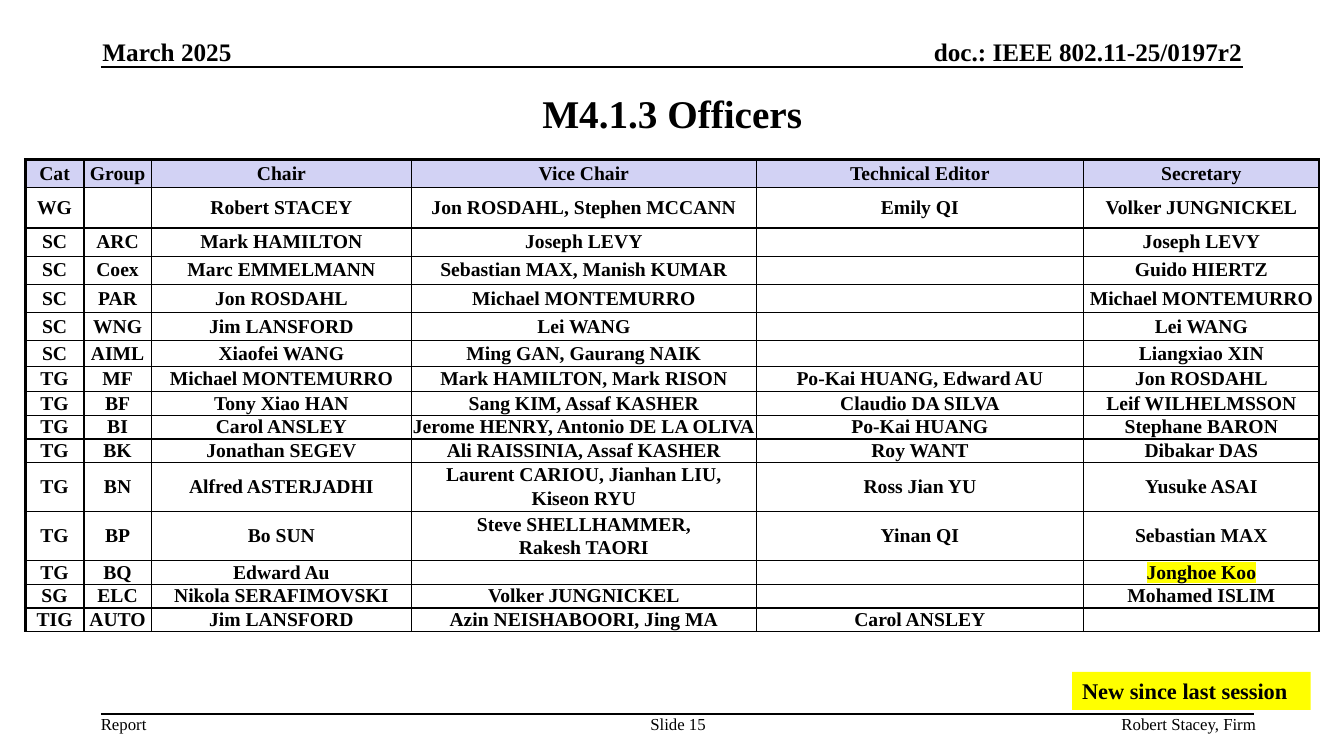
import pptx
import pptx.dml.color
import pptx.enum.shapes
import pptx.enum.text
import pptx.oxml
import pptx.oxml.ns
import pptx.util
from dataclasses import dataclass
from lxml import etree


@dataclass(frozen=True)
class Theme:
    font: str = "Times New Roman"
    ink: str = "000000"
    header_fill: str = "D2D2F4"
    highlight: str = "FFFF00"
    title_size: int = 28
    header_size: int = 18
    legend_size: int = 16
    table_size: int = 14
    footer_size: int = 12
    thin: float = 1
    thick: float = 2.25


theme = Theme()
ALIGN = pptx.enum.text.PP_ALIGN
ANCHOR = pptx.enum.text.MSO_ANCHOR
qn = pptx.oxml.ns.qn
color = pptx.dml.color.RGBColor.from_string

# The slide is a grid of 160 columns by 90 rows
presentation = pptx.Presentation()
presentation.slide_width = pptx.util.Inches(13.33)
presentation.slide_height = pptx.util.Inches(7.5)
slide = presentation.slides.add_slide(presentation.slide_layouts[6])


def grid(*units):
    return [round(unit * presentation.slide_height / 90) for unit in units]


def write(paragraph, text, size, bold, align):
    paragraph.alignment = align
    run = paragraph.add_run()
    run.text = text
    run.font.name = theme.font
    run.font.size = pptx.util.Pt(size)
    run.font.bold = bold
    run.font.color.rgb = color(theme.ink)
    return run


# Header and footer rules
for left, right, row in [(12, 148, 8), (12, 149.3, 85)]:
    rule = slide.shapes.add_connector(
        pptx.enum.shapes.MSO_CONNECTOR.STRAIGHT, *grid(left, row, right, row))
    rule.line.color.rgb = color(theme.ink)
    rule.line.width = pptx.util.Pt(theme.thin)
    etree.SubElement(rule._element.spPr, qn("a:effectLst"))

# Title, header and footer texts
texts = [
    ("M4.1.3 Officers", (12, 9, 136, 8.9), theme.title_size, True, ALIGN.CENTER, ANCHOR.MIDDLE),
    ("March 2025", (12.2, 4.3, 17, 3.6), theme.header_size, True, ALIGN.LEFT, ANCHOR.BOTTOM),
    ("doc.: IEEE 802.11-25/0197r2", (101.8, 4.3, 46, 3.6), theme.header_size, True,
     ALIGN.RIGHT, ANCHOR.BOTTOM),
    ("Report", (12, 85, 7, 2.4), theme.footer_size, False, ALIGN.LEFT, ANCHOR.TOP),
    ("Slide 15", (76.7, 85, 8, 2.4), theme.footer_size, False, ALIGN.CENTER, ANCHOR.TOP),
    ("Robert Stacey, Firm", (121.1, 85, 28.4, 2.4), theme.footer_size, False,
     ALIGN.RIGHT, ANCHOR.TOP),
]
for text, place, size, bold, align, anchor in texts:
    frame = slide.shapes.add_textbox(*grid(*place)).text_frame
    frame.word_wrap = True
    frame.vertical_anchor = anchor
    frame.margin_left = frame.margin_right = frame.margin_top = frame.margin_bottom = 0
    write(frame.paragraphs[0], text, size, bold, align)

# Legend for the highlight
legend = slide.shapes.add_shape(
    pptx.enum.shapes.MSO_SHAPE.RECTANGLE, *grid(127.6, 80, 28.4, 4.5))
legend.shadow.inherit = False
legend.fill.solid()
legend.fill.fore_color.rgb = color(theme.highlight)
legend.line.fill.background()
legend.text_frame.word_wrap = True
legend.text_frame.vertical_anchor = ANCHOR.MIDDLE
write(legend.text_frame.paragraphs[0], "New since last session", theme.legend_size, True, ALIGN.LEFT)

# Officers: a line feed starts a second paragraph in a cell
officers = [
    ("Cat", "Group", "Chair", "Vice Chair", "Technical Editor", "Secretary"),
    ("WG", "", "Robert STACEY", "Jon ROSDAHL, Stephen MCCANN", "Emily QI", "Volker JUNGNICKEL"),
    ("SC", "ARC", "Mark HAMILTON", "Joseph LEVY", "", "Joseph LEVY"),
    ("SC", "Coex", "Marc EMMELMANN", "Sebastian MAX, Manish KUMAR", "", "Guido HIERTZ"),
    ("SC", "PAR", "Jon ROSDAHL", "Michael MONTEMURRO", "", "Michael MONTEMURRO"),
    ("SC", "WNG", "Jim LANSFORD", "Lei WANG", "", "Lei WANG"),
    ("SC", "AIML", "Xiaofei WANG", "Ming GAN, Gaurang NAIK", "", "Liangxiao XIN"),
    ("TG", "MF", "Michael MONTEMURRO", "Mark HAMILTON, Mark RISON", "Po-Kai HUANG, Edward AU",
     "Jon ROSDAHL"),
    ("TG", "BF", "Tony Xiao HAN", "Sang KIM, Assaf KASHER", "Claudio DA SILVA", "Leif WILHELMSSON"),
    ("TG", "BI", "Carol ANSLEY", "Jerome HENRY, Antonio DE LA OLIVA", "Po-Kai HUANG",
     "Stephane BARON"),
    ("TG", "BK", "Jonathan SEGEV", "Ali RAISSINIA, Assaf KASHER", "Roy WANT", "Dibakar DAS"),
    ("TG", "BN", "Alfred ASTERJADHI", "Laurent CARIOU, Jianhan LIU,\nKiseon RYU", "Ross Jian YU",
     "Yusuke ASAI"),
    ("TG", "BP", "Bo SUN", "Steve SHELLHAMMER,\nRakesh TAORI", "Yinan QI", "Sebastian MAX"),
    ("TG", "BQ", "Edward Au", "", "", "Jonghoe Koo"),
    ("SG", "ELC", "Nikola SERAFIMOVSKI", "Volker JUNGNICKEL", "", "Mohamed ISLIM"),
    ("TIG", "AUTO", "Jim LANSFORD", "Azin NEISHABOORI, Jing MA", "Carol ANSLEY", ""),
]
new_officers = {"Jonghoe Koo"}
column_widths = [7, 8, 31, 41, 39, 28]
row_heights = [3.35, 4.8] + [3.35] * 4 + [3.05] * 2 + [2.8] * 3 + [5.85] * 2 + [2.8] * 3

# Officers table
table = slide.shapes.add_table(
    len(officers), len(column_widths),
    *grid(3, 19, sum(column_widths), sum(row_heights))).table
table.first_row = table.horz_banding = False
for column, width in zip(table.columns, grid(*column_widths)):
    column.width = width
for row, height in zip(table.rows, grid(*row_heights)):
    row.height = height

for row_index, names in enumerate(officers):
    for column_index, name in enumerate(names):
        cell = table.cell(row_index, column_index)
        cell.margin_left = cell.margin_right = cell.margin_top = cell.margin_bottom = 0
        cell.vertical_anchor = ANCHOR.MIDDLE

        # Borders: heavy on the left, right and top edges of the table
        heavy = {"lnL": column_index == 0, "lnR": column_index == len(names) - 1,
                 "lnT": row_index == 0, "lnB": False}
        for side, is_heavy in heavy.items():
            width = pptx.util.Pt(theme.thick if is_heavy else theme.thin)
            border = etree.SubElement(cell._tc.get_or_add_tcPr(), qn("a:" + side), w=str(width))
            fill = etree.SubElement(border, qn("a:solidFill"))
            etree.SubElement(fill, qn("a:srgbClr"), val=theme.ink)

        if row_index == 0:
            cell.fill.solid()
            cell.fill.fore_color.rgb = color(theme.header_fill)
        else:
            cell.fill.background()

        # Names, with the new ones highlighted
        frame = cell.text_frame
        if not name:
            etree.SubElement(frame.paragraphs[0]._p, qn("a:endParaRPr"),
                             sz=str(theme.table_size * 100))
            continue
        for line_index, line in enumerate(name.split("\n")):
            paragraph = frame.add_paragraph() if line_index else frame.paragraphs[0]
            if line_index:
                paragraph.space_before = pptx.util.Pt(theme.table_size / 10)
            run = write(paragraph, line, theme.table_size, True, ALIGN.CENTER)
            if name in new_officers:
                highlight = pptx.oxml.parse_xml(
                    f'<a:highlight {pptx.oxml.ns.nsdecls("a")}>'
                    f'<a:srgbClr val="{theme.highlight}"/></a:highlight>')
                run._r.rPr.find(qn("a:solidFill")).addnext(highlight)

presentation.save("out.pptx")
